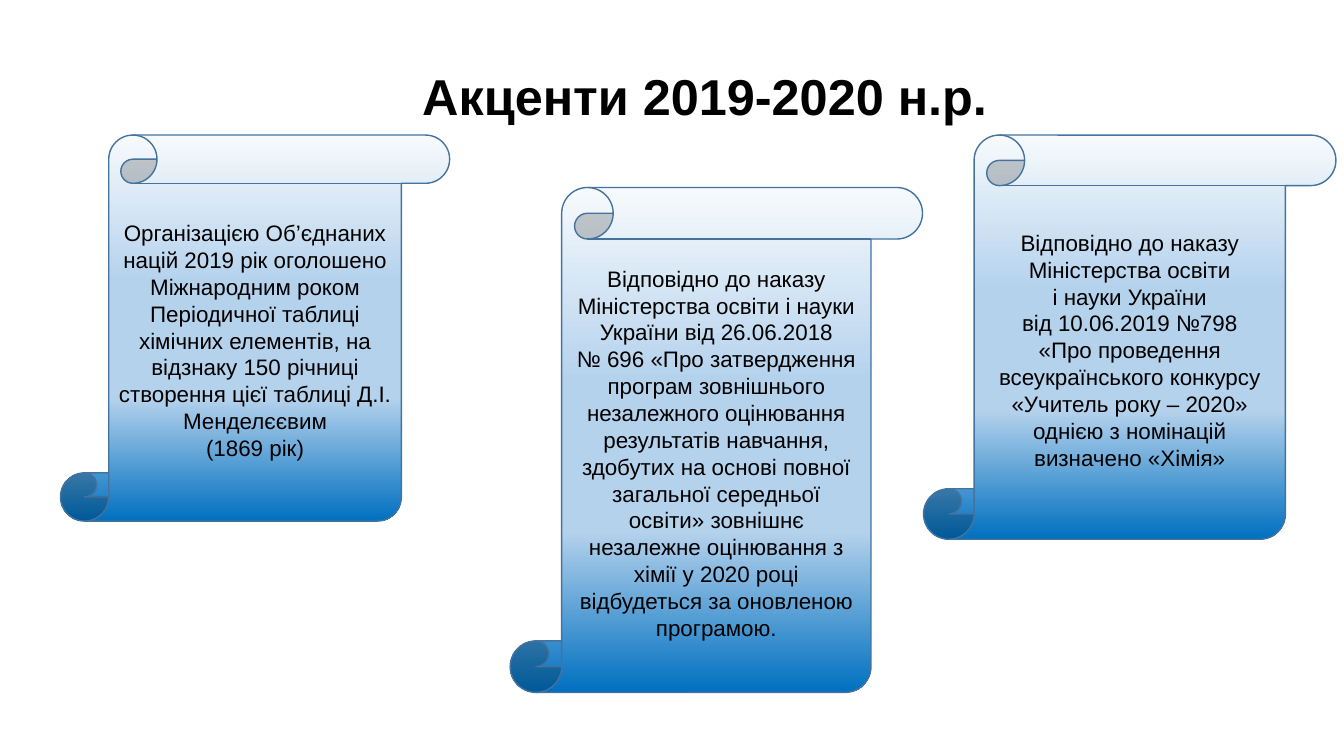
import pptx
import pptx.dml.color
import pptx.enum.shapes
import pptx.enum.text
import pptx.oxml
import pptx.oxml.ns
import pptx.util
from pptx.util import Inches

SCROLL_STOPS = [(0, "F7FAFD"), (38, "B5D2EC"), (68, "B5D2EC"), (100, "0070C0")]
SCROLLS = [
    ((9.16, 1.34, 4.09, 4.01),
     "Відповідно до наказу Міністерства освіти\nі науки України\n"
     "від 10.06.2019 №798\n«Про проведення всеукраїнського конкурсу "
     "«Учитель року – 2020» однією з номінацій визначено «Хімія»"),
    ((0.6, 1.34, 3.86, 3.83),
     "Організацією Об’єднаних націй 2019 рік оголошено Міжнародним роком "
     "Періодичної таблиці хімічних елементів, на відзнаку 150 річниці "
     "створення цієї таблиці Д.І. Менделєєвим\n(1869 рік)"),
    ((5.06, 1.86, 4.09, 5.01),
     "Відповідно до наказу Міністерства освіти і науки України від 26.06.2018\n"
     "№ 696 «Про затвердження програм зовнішнього незалежного оцінювання "
     "результатів навчання, здобутих на основі повної загальної середньої "
     "освіти» зовнішнє незалежне оцінювання з хімії у 2020 році "
     "відбудеться за оновленою програмою."),
]


def rgb(value):
    """Turn a hex string into a colour."""
    return pptx.dml.color.RGBColor.from_string(value)


def write_text(frame, text, size=16, bold=False, color="000000", spacing=1.0):
    """Fill a text frame with one centred paragraph, newlines as line breaks."""
    frame.word_wrap = True
    frame.vertical_anchor = pptx.enum.text.MSO_ANCHOR.MIDDLE
    paragraph = frame.paragraphs[0]
    paragraph.text = text.replace("\n", "\v")
    paragraph.alignment = pptx.enum.text.PP_ALIGN.CENTER
    paragraph.line_spacing = spacing
    for run in paragraph.runs:
        run.font.name = "Arial"
        run.font.size = pptx.util.Pt(size)
        run.font.bold = bold
        run.font.color.rgb = rgb(color)


def fill_gradient(shape, stops):
    """Fill a shape from top to bottom with (percent, colour) stops."""
    shape.fill.gradient()
    shape.fill.gradient_angle = 270
    stop_list = shape._element.spPr.find(".//" + pptx.oxml.ns.qn("a:gsLst"))
    for old_stop in list(stop_list):
        stop_list.remove(old_stop)
    for percent, color in stops:
        stop_list.append(pptx.oxml.parse_xml(
            f'<a:gs {pptx.oxml.ns.nsdecls("a")} pos="{percent * 1000}">'
            f'<a:srgbClr val="{color}"/></a:gs>'))


def add_title(slide, text):
    """Place and format the slide title."""
    title = slide.shapes.title
    title.left, title.top = Inches(1.78), Inches(0.62)
    title.width, title.height = Inches(10.42), Inches(0.72)
    write_text(title.text_frame, text, size=36, bold=True, spacing=0.9)


def add_scroll(slide, box, text):
    """Add a vertical scroll with text."""
    scroll = slide.shapes.add_shape(
        pptx.enum.shapes.MSO_SHAPE.VERTICAL_SCROLL, *map(Inches, box))
    scroll.shadow.inherit = False
    fill_gradient(scroll, SCROLL_STOPS)
    scroll.line.color.rgb = rgb("43739E")
    scroll.line.width = pptx.util.Pt(1)
    write_text(scroll.text_frame, text)


def main():
    """Build and save the slide."""
    deck = pptx.Presentation()
    deck.slide_width, deck.slide_height = Inches(13.33), Inches(7.5)
    slide = deck.slides.add_slide(deck.slide_layouts[5])
    slide.background.fill.solid()
    slide.background.fill.fore_color.rgb = rgb("FFFFFF")
    add_title(slide, "Акценти 2019-2020 н.р.")
    for box, text in SCROLLS:
        add_scroll(slide, box, text)
    deck.save("out.pptx")


if __name__ == "__main__":
    main()
